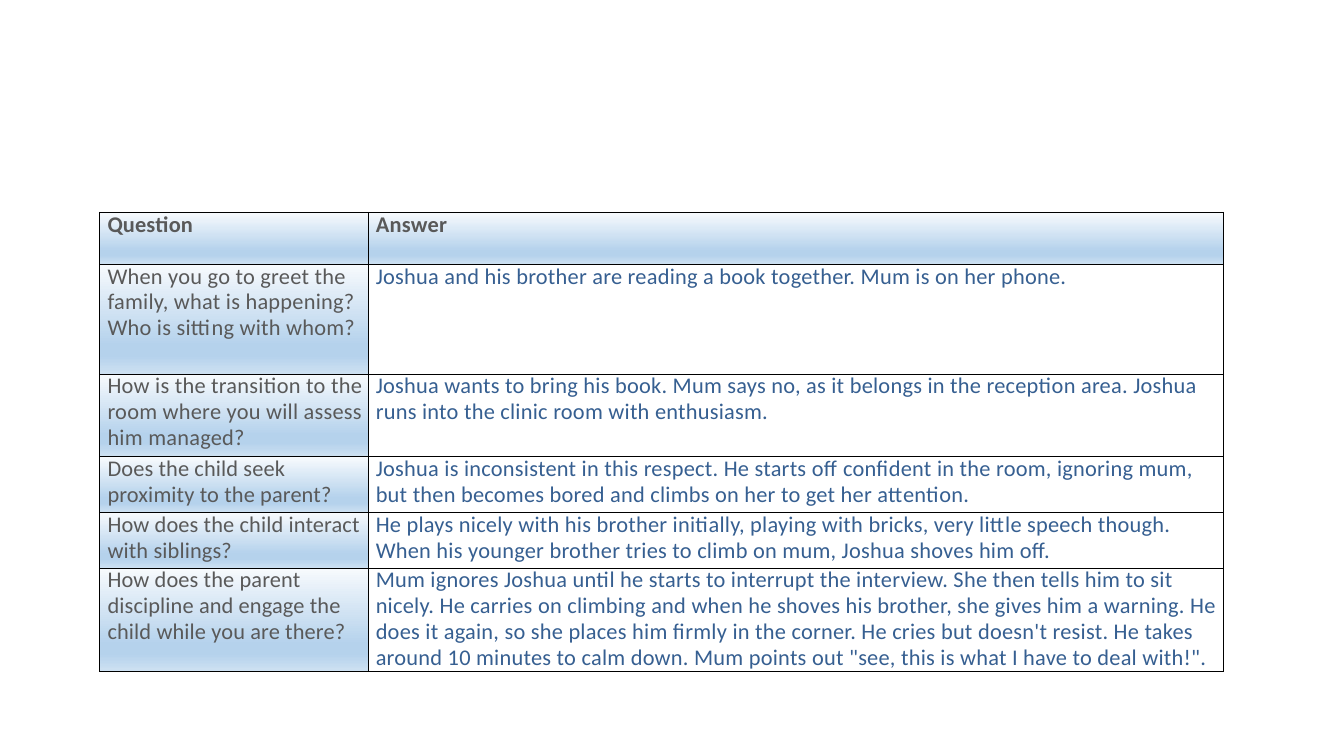
from lxml import etree
from pptx import Presentation
from pptx.dml.color import RGBColor
from pptx.oxml import ns
from pptx.util import Cm, Pt

# Content: row height in cm, question, its letter spacing (1/100 pt), answer
ROWS = [
    (1.31, "Question", 10, "Answer"),
    (2.77, "When you go to greet the family, what is happening? Who is sitting with whom?", 20,
     "Joshua and his brother are reading a book together. Mum is on her phone."),
    (2.08, "How is the transition to the room where you will assess him managed?", 20,
     "Joshua wants to bring his book. Mum says no, as it belongs in the reception area. "
     "Joshua runs into the clinic room with enthusiasm."),
    (1.41, "Does the child seek proximity to the parent?", 10,
     "Joshua is inconsistent in this respect. He starts off confident in the room, ignoring mum, "
     "but then becomes bored and climbs on her to get her attention."),
    (1.4, "How does the child interact with siblings?", 10,
     "He plays nicely with his brother initially, playing with bricks, very little speech though. "
     "When his younger brother tries to climb on mum, Joshua shoves him off."),
    (2.6, "How does the parent discipline and engage the child while you are there?", 10,
     "Mum ignores Joshua until he starts to interrupt the interview. She then tells him to sit "
     "nicely. He carries on climbing and when he shoves his brother, she gives him a warning. "
     "He does it again, so she places him firmly in the corner. He cries but doesn't resist. "
     "He takes around 10 minutes to calm down. Mum points out \"see, this is what I have to "
     "deal with!\"."),
]
COLUMN_WIDTHS = (6.76, 21.56)
LEFT, TOP = 2.51, 5.35
ANSWER_SPACING = 20
GREY, BLUE, BLACK = "595959", "365F91", "000000"
GRADIENT = [(0, "F7FAFD"), (74, "B5D2EC"), (83, "B5D2EC"), (100, "CEE1F2")]


def color(value):
    return RGBColor.from_string(value)


def add_element(parent, tag, **attributes):
    element = etree.SubElement(parent, ns.qn(tag))
    for name, value in attributes.items():
        element.set(name, str(value))
    return element


def add_borders(cell):
    properties = cell._tc.get_or_add_tcPr()
    for side in "LRTB":
        line = add_element(properties, f"a:ln{side}", w=Pt(0.5))
        add_element(add_element(line, "a:solidFill"), "a:srgbClr", val=BLACK)


def add_gradient(cell):
    fill = add_element(cell._tc.get_or_add_tcPr(), "a:gradFill", rotWithShape=1)
    stops = add_element(fill, "a:gsLst")
    for position, value in GRADIENT:
        stop = add_element(stops, "a:gs", pos=position * 1000)
        add_element(stop, "a:srgbClr", val=str(color(value)))
    add_element(fill, "a:lin", ang=90 * 60000, scaled=0)


def fill_cell(cell, content, spacing, font_color, bold, shaded):
    cell.margin_left = Cm(0.2)
    cell.margin_right = cell.margin_top = cell.margin_bottom = 0
    add_borders(cell)
    if shaded:
        add_gradient(cell)
    else:
        cell.fill.background()
    cell.text_frame.text = content
    paragraph = cell.text_frame.paragraphs[0]
    paragraph.line_spacing = Pt(18.4)
    run = paragraph.runs[0]
    run.font.name = "Calibri"
    run.font.size = Pt(16)
    run.font.bold = bold
    run.font.color.rgb = color(font_color)
    run._r.get_or_add_rPr().set("spc", str(spacing))


# Slide
presentation = Presentation()
presentation.slide_width, presentation.slide_height = Cm(33.87), Cm(19.05)
slide = presentation.slides.add_slide(presentation.slide_layouts[6])

# Table
table = slide.shapes.add_table(
    len(ROWS), len(COLUMN_WIDTHS), Cm(LEFT), Cm(TOP),
    Cm(sum(COLUMN_WIDTHS)), Cm(sum(row[0] for row in ROWS))).table
table.first_row = table.horz_banding = False
for column, width in zip(table.columns, COLUMN_WIDTHS):
    column.width = Cm(width)

for index, (height, question, spacing, answer) in enumerate(ROWS):
    header = index == 0
    table.rows[index].height = Cm(height)
    fill_cell(table.cell(index, 0), question, spacing, GREY, header, True)
    fill_cell(table.cell(index, 1), answer, ANSWER_SPACING,
              GREY if header else BLUE, header, header)

presentation.save("out.pptx")
